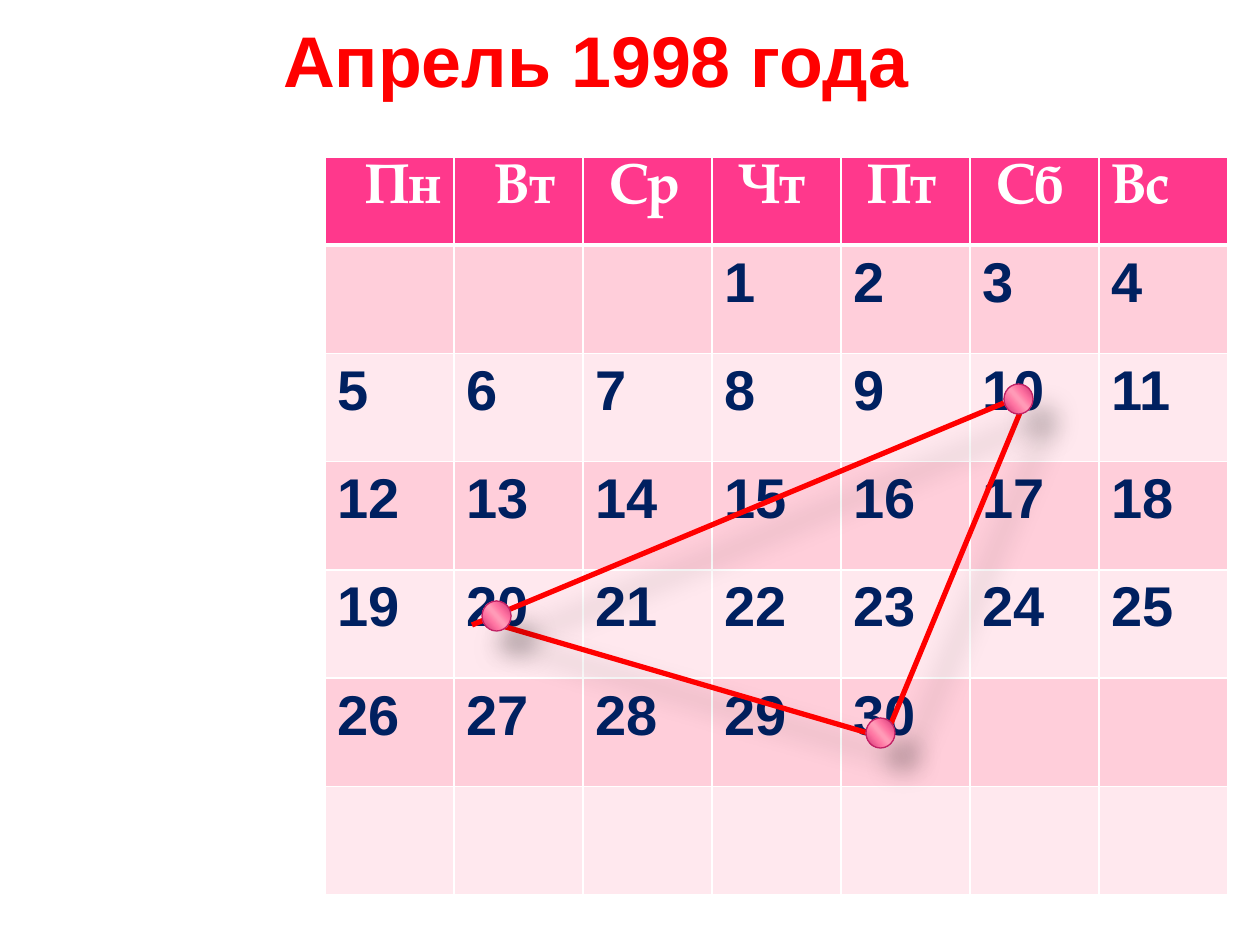
import pptx
import pptx.util
import pptx.dml.color
import pptx.enum.shapes
import pptx.enum.text
import pptx.oxml
import pptx.oxml.ns

RGB = pptx.dml.color.RGBColor
RED = RGB(0xFF, 0x00, 0x00)
WHITE = RGB(0xFF, 0xFF, 0xFF)
NAVY = RGB(0x00, 0x20, 0x60)
PINK = RGB(0xFF, 0x38, 0x8C)
ROSE = RGB(0xFF, 0xCE, 0xDA)
PALE = RGB(0xFF, 0xE8, 0xEE)
WINE = RGB(0xC1, 0x21, 0x65)
BLACK = RGB(0x00, 0x00, 0x00)
SHINE = [(0, RGB(0xCC, 0x2D, 0x70)), (33, RGB(0xFF, 0x73, 0xA2)),
         (47, RGB(0xFF, 0x9A, 0xB7)), (53, RGB(0xFF, 0x9A, 0xB7)),
         (68, RGB(0xFF, 0x75, 0xA3)), (100, RGB(0xCC, 0x2D, 0x70))]

DAYS = ["Пн", "Вт", "Ср", "Чт", "Пт", "Сб", "Вс"]
INDENT = [28, 28, 14, 14, 14, 14, 0]
FIRST, LAST, WEEKS = 3, 30, 6  # column of day 1, last day, week rows
PAD = 13


def px(n):
    return round(n * 914400 / 126)


def xml(tag, body):
    return pptx.oxml.parse_xml(
        f'<a:{tag} {pptx.oxml.ns.nsdecls("a")}>{body}</a:{tag}>')


def write(frame, text, size=32, font="Arial", color=NAVY, align=None):
    par = frame.paragraphs[0]
    par.alignment = align
    run = par.add_run()
    run.text = text
    run.font.size = pptx.util.Pt(size)
    run.font.name = font
    run.font.bold = True
    run.font.color.rgb = color


def shade(shape):
    shape._element.spPr.append(xml("effectLst", (
        f'<a:outerShdw blurRad="{pptx.util.Pt(15)}" dist="{pptx.util.Pt(18)}" '
        'dir="2700000" algn="ctr" rotWithShape="0">'
        f'<a:srgbClr val="{BLACK}"><a:alpha val="26000"/></a:srgbClr>'
        '</a:outerShdw>')))


def edge(cell, top=1, bottom=1):
    sides = {"lnL": 1, "lnR": 1, "lnT": top, "lnB": bottom}
    props = cell._tc.get_or_add_tcPr()
    for i, (side, width) in enumerate(sides.items()):
        line = xml(side, f'<a:solidFill><a:srgbClr val="{WHITE}"/></a:solidFill>')
        line.set("w", str(pptx.util.Pt(width)))
        props.insert(i, line)


def title(slide, x, y, w, h):
    box = slide.shapes.title
    box.left, box.top, box.width, box.height = map(px, (x, y, w, h))
    frame = box.text_frame
    frame.vertical_anchor = pptx.enum.text.MSO_ANCHOR.MIDDLE
    write(frame, "Апрель 1998 года", size=41, color=RED,
          align=pptx.enum.text.PP_ALIGN.CENTER)


def month(slide, x, y, w, h, head=88):
    grid = slide.shapes.add_table(WEEKS + 1, len(DAYS),
                                  px(x), px(y), px(w), px(h)).table
    for col in grid.columns:
        col.width = px(w / len(DAYS))
    for r, row in enumerate(grid.rows):
        row.height = px((h - head) / WEEKS) if r else px(head)
        for c, cell in enumerate(row.cells):
            cell.fill.solid()
            cell.fill.fore_color.rgb = (ROSE if r % 2 else PALE) if r else PINK
            edge(cell, top=3 if r == 1 else 1, bottom=1 if r else 3)
            day = (r - 1) * len(DAYS) + c - FIRST + 1
            if r == 0:
                cell.margin_left = px(PAD + INDENT[c])
                cell.margin_right = 0
                write(cell.text_frame, DAYS[c], font="TeX Gyre Pagella",
                      color=WHITE)
            elif 1 <= day <= LAST:
                write(cell.text_frame, str(day))


def link(slide, x1, y1, x2, y2):
    line = slide.shapes.add_connector(
        pptx.enum.shapes.MSO_CONNECTOR.STRAIGHT, px(x1), px(y1), px(x2), px(y2))
    line.line.color.rgb = RED
    line.line.width = pptx.util.Pt(3)
    shade(line)


def dot(slide, x, y, w=29, h=30):
    ball = slide.shapes.add_shape(
        pptx.enum.shapes.MSO_SHAPE.FLOWCHART_CONNECTOR,
        px(x), px(y), px(w), px(h))
    ball.line.color.rgb = WINE
    ball.line.width = pptx.util.Pt(0.75)
    # Shiny fill with six stops
    stops = "".join(f'<a:gs pos="{p * 1000}"><a:srgbClr val="{c}"/></a:gs>'
                    for p, c in SHINE)
    fill = xml("gradFill", f'<a:gsLst>{stops}</a:gsLst>'
                           f'<a:lin ang="{139 * 60000}" scaled="1"/>')
    ball._element.spPr.insert(2, fill)
    shade(ball)


def path(slide, x, y):
    # Triangle through the 10th, 20th and 30th
    for x1, y1, x2, y2 in [(522, 211, -10, 433), (542, 211, 403, 546),
                           (0, 428, 403, 546)]:
        link(slide, x + x1, y + y1, x + x2, y + y2)
    for dx, dy in [(0, 409), (384, 526), (522, 192)]:
        dot(slide, x + dx, y + dy)


def main():
    deck = pptx.Presentation()
    deck.slide_width, deck.slide_height = px(1260), px(945)
    slide = deck.slides.add_slide(deck.slide_layouts[5])
    title(slide, 29, 0, 1134, 118)
    month(slide, 325, 157, 903, 738)
    path(slide, 482, 192)
    deck.save("out.pptx")


if __name__ == "__main__":
    main()
